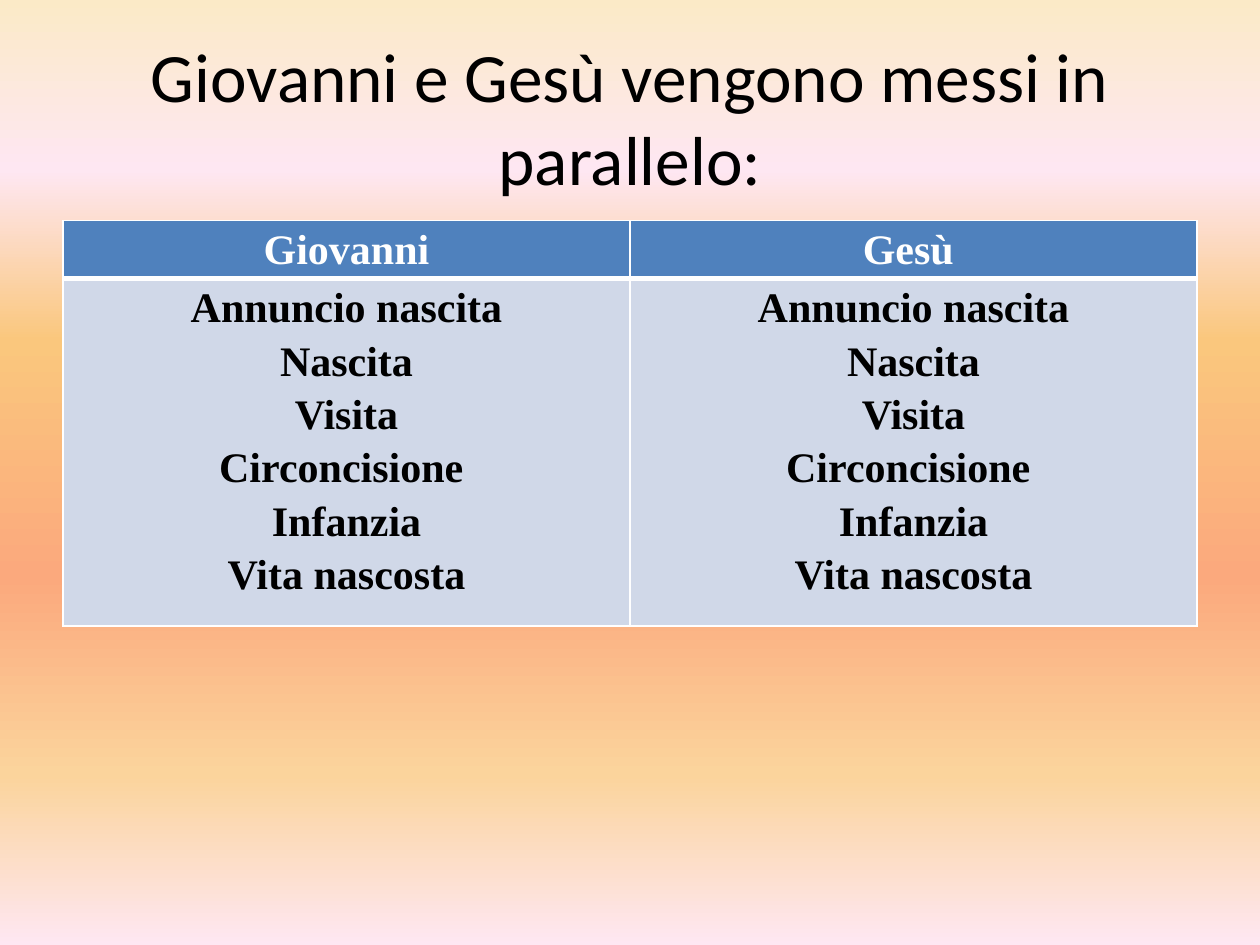
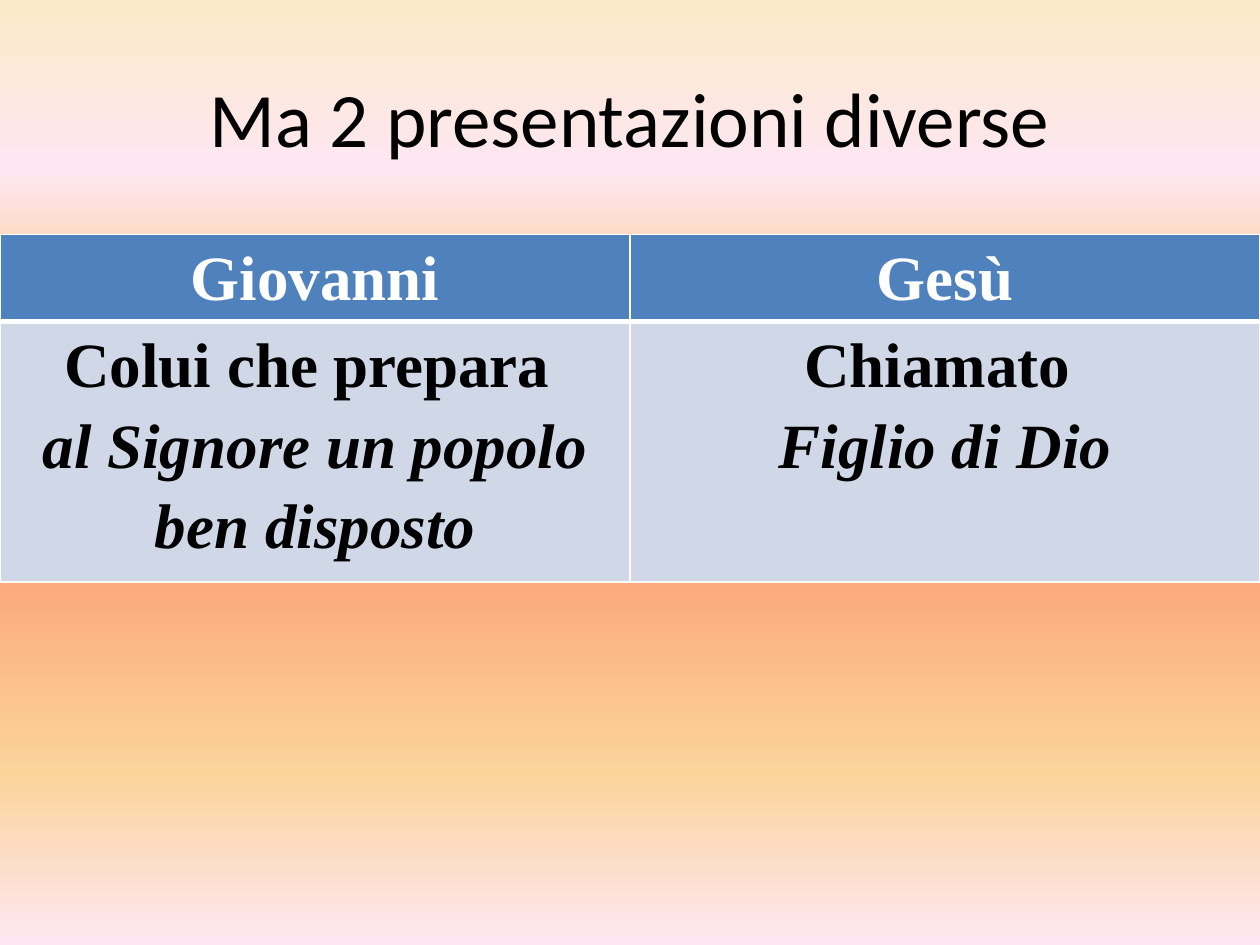
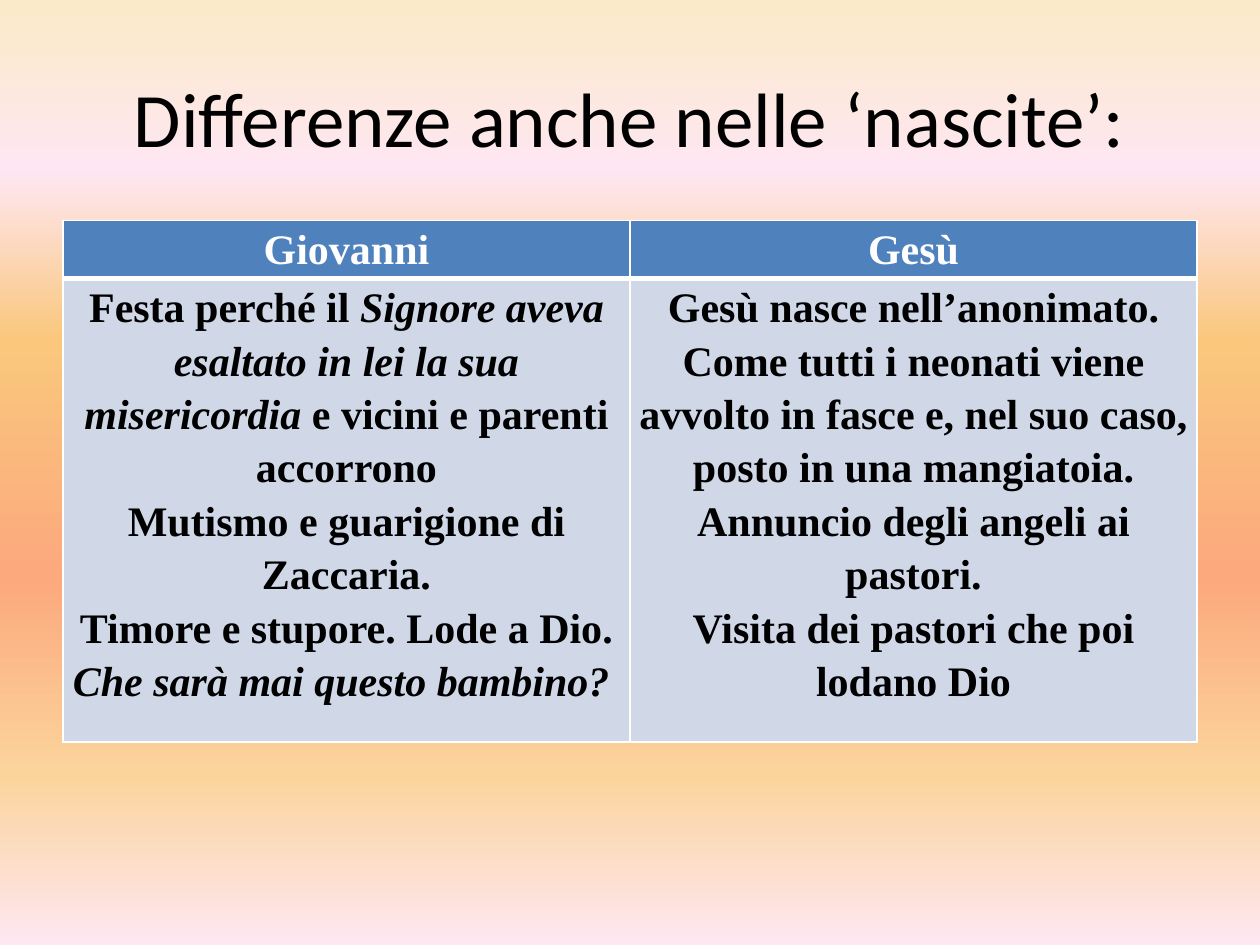
"""Three slides that compare Giovanni and Gesù in two-column tables."""
import pptx
import pptx.dml.color
import pptx.enum.text
import pptx.oxml
import pptx.oxml.ns
import pptx.util
import lxml.etree

Pt = pptx.util.Pt
qn = pptx.oxml.ns.qn
HUES = {"head": "4F81BD", "body": "D0D8E8", "white": "FFFFFF", "black": "000000"}
SKY = {0: "FBEAC7", 18: "FEE7F2", 36: "FAC77D", 61: "FBA97D", 82: "FBD49C", 100: "FEE7F2"}
EVENTS = ["Annuncio nascita", "Nascita", "Visita", "Circoncisione ", "Infanzia", "Vita nascosta"]

SLIDES = [
    {"title": "Giovanni e Gesù vengono messi in parallelo:", "big": 39.6,
     "box": (36, 126, 648, 226.8), "size": 24,
     "rows": [[["Giovanni"], ["Gesù "]], [EVENTS, EVENTS]]},
    {"title": "Ma 2 presentazioni diverse", "big": 44,
     "box": (0, 134, 720, 191.5), "size": 36,
     "rows": [[["Giovanni"], ["Gesù"]],
              [["Colui che prepara ", "*al Signore un popolo ben disposto*"],
               ["Chiamato ", "*Figlio di Dio*"]]]},
    {"title": "Differenze anche nelle ‘nascite’:", "big": 44,
     "box": (36, 126, 648, 293), "size": 24,
     "rows": [[["Giovanni"], ["Gesù"]],
              [["Festa perché il *Signore aveva esaltato in lei la sua misericordia *"
                "e vicini e parenti accorrono",
                "Mutismo e guarigione di Zaccaria.",
                "Timore e stupore. Lode a Dio.",
                "*Che sarà mai questo bambino? *"],
               ["Gesù nasce nell’anonimato. Come tutti i neonati viene avvolto in fasce e, "
                "nel suo caso, posto in una mangiatoia.",
                "Annuncio degli angeli ai pastori.",
                "Visita dei pastori che poi lodano Dio"]]]},
]


def write(frame, lines, face, size, hue, bold=False, space=None):
    """Write centred lines; the parts between asterisks are italic."""
    for num, line in enumerate(lines):
        para = frame.add_paragraph() if num else frame.paragraphs[0]
        para.alignment = pptx.enum.text.PP_ALIGN.CENTER
        para.line_spacing = space
        for part, text in enumerate(line.split("*")):
            if text:
                run = para.add_run()
                run.text = text
                run.font.name = face
                run.font.size = Pt(size)
                run.font.bold = bold
                run.font.italic = part % 2 == 1
                run.font.color.rgb = pptx.dml.color.RGBColor.from_string(HUES[hue])


def edge(cell, widths):
    """Draw the white left, right, top and bottom borders of a cell."""
    props = cell._tc.get_or_add_tcPr()
    for spot, (side, width) in enumerate(zip("LRTB", widths)):
        line = pptx.oxml.parse_xml(
            f'<a:ln{side} {pptx.oxml.ns.nsdecls("a")} w="{Pt(width)}"><a:solidFill>'
            f'<a:srgbClr val="{HUES["white"]}"/></a:solidFill></a:ln{side}>')
        props.insert(spot, line)


deck = pptx.Presentation()
deck.slide_width, deck.slide_height = Pt(720), Pt(540)

fill = deck.slide_master.background.fill
fill.gradient()
fill.gradient_angle = 270
stops = next(deck.slide_master.element.iter(qn("a:gsLst")))
for stop in list(stops):
    stops.remove(stop)
for place, hue in SKY.items():
    stop = lxml.etree.SubElement(stops, qn("a:gs"), pos=str(place * 1000))
    lxml.etree.SubElement(stop, qn("a:srgbClr"), val=hue)

for data in SLIDES:
    slide = deck.slides.add_slide(deck.slide_layouts[6])
    title = slide.shapes.add_textbox(Pt(36), Pt(21.6), Pt(648), Pt(90)).text_frame
    title.word_wrap = True
    title.vertical_anchor = pptx.enum.text.MSO_ANCHOR.MIDDLE
    write(title, [data["title"]], "Calibri", data["big"], "black")

    left, top, width, height = data["box"]
    frame = slide.shapes.add_table(2, 2, Pt(left), Pt(top), Pt(width), Pt(height))
    for row, cells in enumerate(data["rows"]):
        frame.table.rows[row].height = Pt(29.5)
        for col, lines in enumerate(cells):
            cell = frame.table.cell(row, col)
            cell.margin_left = cell.margin_right = Pt(5)
            cell.margin_top = cell.margin_bottom = 0
            cell.fill.solid()
            cell.fill.fore_color.rgb = pptx.dml.color.RGBColor.from_string(
                HUES["body" if row else "head"])
            edge(cell, (1, 1, 3, 1) if row else (1, 1, 1, 3))
            write(cell.text_frame, lines, "Times New Roman", data["size"],
                  "black" if row else "white", True, 1.15)
    frame.height = Pt(height)

deck.save("out.pptx")
